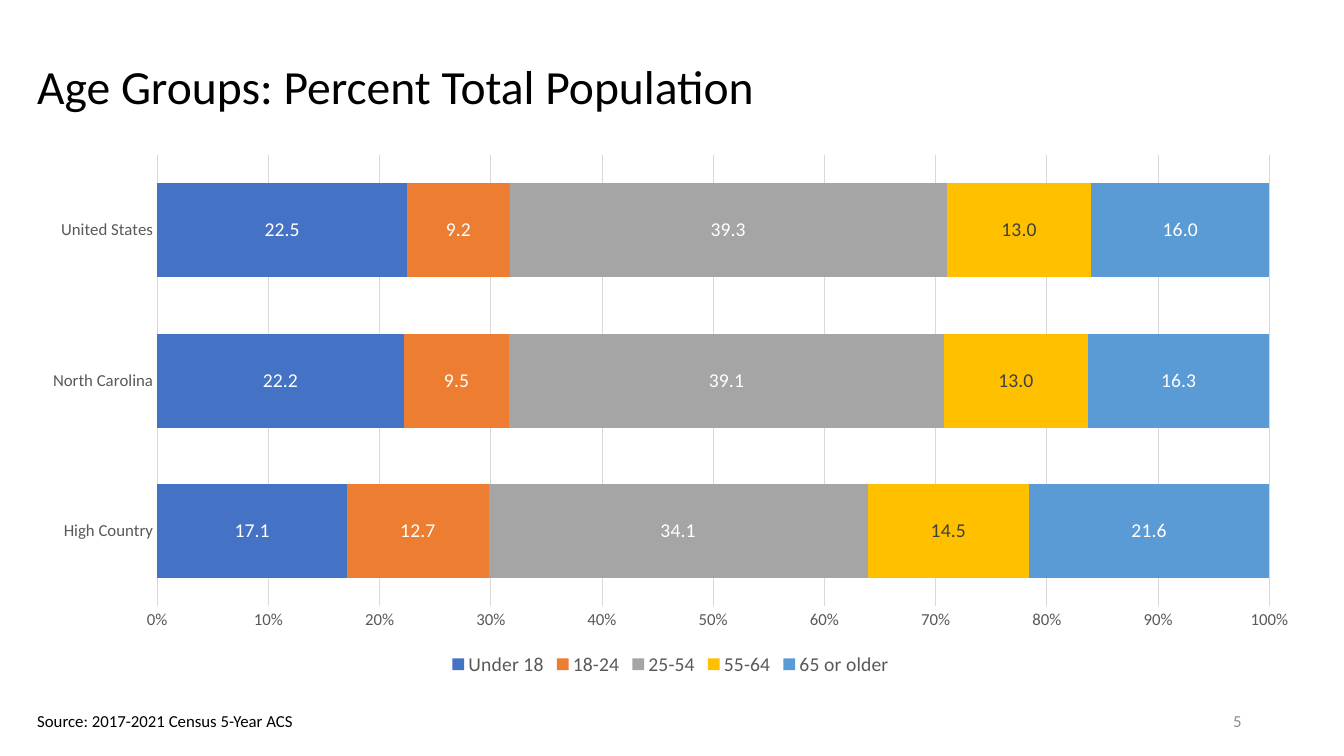
from pptx import Presentation
from pptx.chart.data import CategoryChartData
from pptx.dml.color import RGBColor
from pptx.enum.chart import XL_CHART_TYPE as ChartType
from pptx.enum.chart import XL_LABEL_POSITION as LabelPosition
from pptx.enum.chart import XL_LEGEND_POSITION as LegendPosition
from pptx.enum.chart import XL_TICK_MARK as TickMark
from pptx.enum.text import MSO_ANCHOR as Anchor
from pptx.enum.text import PP_ALIGN as Align
from pptx.util import Pt

FONT = "Calibri"
BLACK = RGBColor(0x00, 0x00, 0x00)
WHITE = RGBColor(0xFF, 0xFF, 0xFF)
DARK = RGBColor(0x40, 0x40, 0x40)
GRAY = RGBColor(0x59, 0x59, 0x59)
NUMBER_GRAY = RGBColor(0x8C, 0x8C, 0x8C)
GRID = RGBColor(0xD9, 0xD9, 0xD9)
BLUE = RGBColor(0x44, 0x72, 0xC4)
ORANGE = RGBColor(0xED, 0x7D, 0x31)
SILVER = RGBColor(0xA5, 0xA5, 0xA5)
GOLD = RGBColor(0xFF, 0xC0, 0x00)
SKY = RGBColor(0x5B, 0x9B, 0xD5)

# Content
TITLE = "Age Groups: Percent Total Population"
SOURCE = "Source: 2017-2021 Census 5-Year ACS"
PAGE_NUMBER = "5"
REGIONS = ["High Country", "North Carolina", "United States"]
AGE_GROUPS = [  # name, percentages by region, fill, label colour
    ("Under 18", (17.1, 22.2, 22.5), BLUE, WHITE),
    ("18-24", (12.7, 9.5, 9.2), ORANGE, WHITE),
    ("25-54", (34.1, 39.1, 39.3), SILVER, WHITE),
    ("55-64", (14.5, 13.0, 13.0), GOLD, DARK),
    ("65 or older", (21.6, 16.3, 16.0), SKY, WHITE),
]

# Layout
SLIDE_WIDTH, SLIDE_HEIGHT = 960, 540
MARGIN = 19.5
CONTENT_WIDTH = SLIDE_WIDTH - 2 * MARGIN - 2
TITLE_TOP, TITLE_HEIGHT = 24.5, 78.5
CHART_TOP, CHART_HEIGHT = TITLE_TOP + TITLE_HEIGHT, 383


def style_font(font, size, color):
    font.name = FONT
    font.size = Pt(size)
    font.color.rgb = color


def add_text(slide, text, box, *, size, color=BLACK, align=Align.LEFT,
             anchor=Anchor.TOP, wrap=True, line_spacing=1.0):
    shape = slide.shapes.add_textbox(*map(Pt, box))
    frame = shape.text_frame
    frame.word_wrap = wrap
    frame.vertical_anchor = anchor
    paragraph = frame.paragraphs[0]
    paragraph.alignment = align
    paragraph.line_spacing = line_spacing
    run = paragraph.add_run()
    run.text = text
    style_font(run.font, size, color)


def style_axis(axis):
    axis.major_tick_mark = axis.minor_tick_mark = TickMark.NONE
    style_font(axis.tick_labels.font, 12, GRAY)


def add_age_chart(slide):
    data = CategoryChartData(number_format="#,##0.0")
    data.categories = REGIONS
    for name, values, *_ in AGE_GROUPS:
        data.add_series(name, values)
    box = (MARGIN, CHART_TOP, CONTENT_WIDTH, CHART_HEIGHT)
    chart = slide.shapes.add_chart(
        ChartType.BAR_STACKED_100, *map(Pt, box), data).chart
    style_font(chart.font, 10, BLACK)
    chart.has_title = False

    # Legend
    chart.has_legend = True
    chart.legend.position = LegendPosition.BOTTOM
    chart.legend.include_in_layout = False
    style_font(chart.legend.font, 14, GRAY)

    # Axes
    regions, percent = chart.category_axis, chart.value_axis
    style_axis(regions)
    style_axis(percent)
    percent.minimum_scale, percent.maximum_scale = 0, 1
    percent.major_unit = 0.1
    percent.tick_labels.number_format = "0%"
    percent.tick_labels.number_format_is_linked = False
    percent.format.line.fill.background()
    percent.has_major_gridlines = True
    for line in (regions.format.line, percent.major_gridlines.format.line):
        line.color.rgb = GRID
        line.width = Pt(0.75)

    # Bars and their labels
    plot = chart.plots[0]
    plot.gap_width, plot.overlap = 60, 100
    plot.vary_by_categories = False
    for series, (_, _, fill, label_color) in zip(plot.series, AGE_GROUPS):
        series.format.fill.solid()
        series.format.fill.fore_color.rgb = fill
        labels = series.data_labels
        labels.show_value = True
        labels.number_format = "#,##0.0"
        labels.number_format_is_linked = False
        labels.position = LabelPosition.CENTER
        style_font(labels.font, 14, label_color)


def main():
    presentation = Presentation()
    presentation.slide_width = Pt(SLIDE_WIDTH)
    presentation.slide_height = Pt(SLIDE_HEIGHT)
    slide = presentation.slides.add_slide(presentation.slide_layouts[6])

    add_text(slide, TITLE, (MARGIN, TITLE_TOP, CONTENT_WIDTH, TITLE_HEIGHT),
             size=34, anchor=Anchor.MIDDLE, line_spacing=0.9)
    add_age_chart(slide)
    add_text(slide, PAGE_NUMBER, (678, 500.5, 216, 28.5), size=12,
             color=NUMBER_GRAY, align=Align.RIGHT, anchor=Anchor.MIDDLE)
    add_text(slide, SOURCE, (MARGIN, 504, 200, 21.5), size=12, wrap=False)

    presentation.save("out.pptx")


if __name__ == "__main__":
    main()
